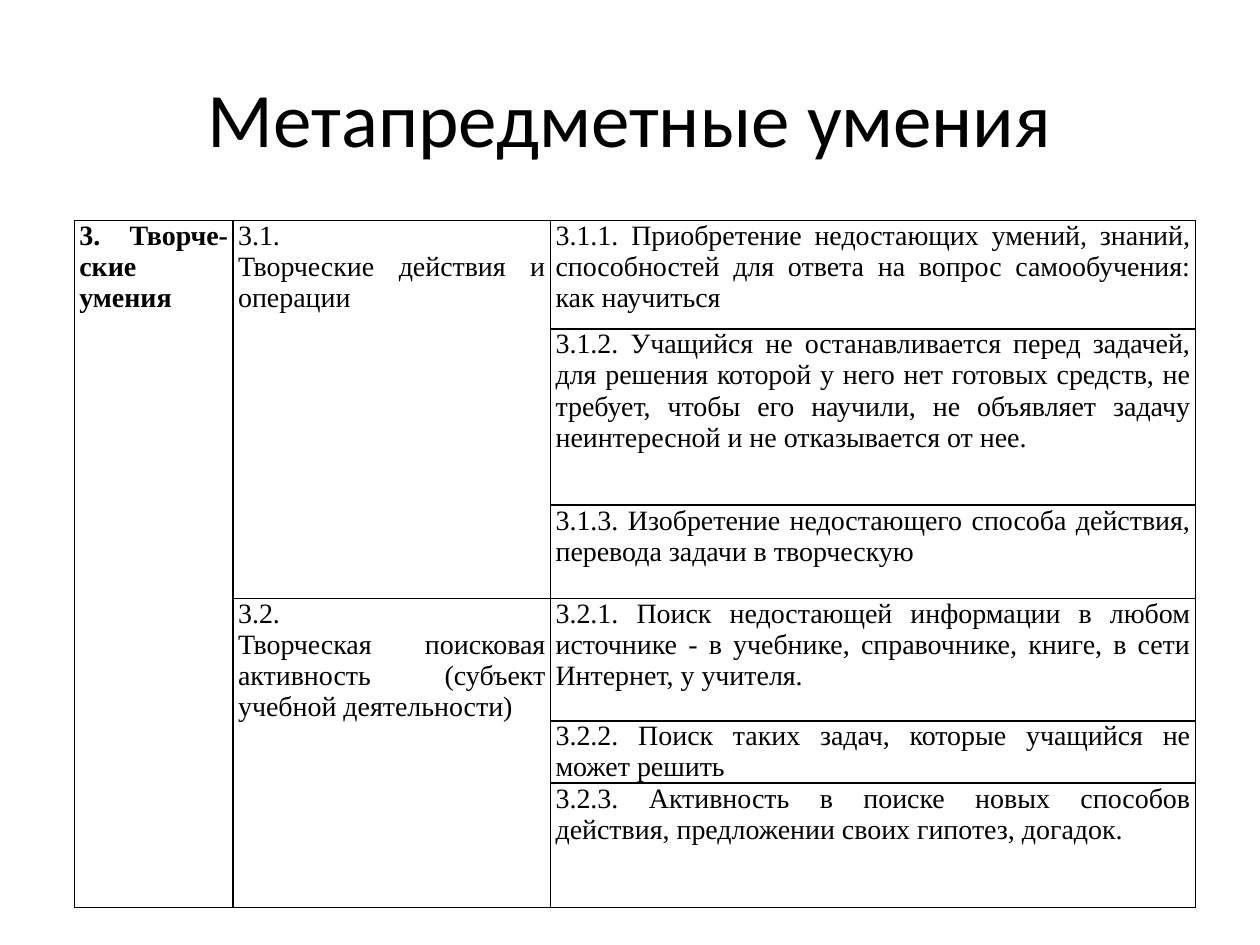
from lxml import etree
from pptx import Presentation
from pptx.dml.color import RGBColor
from pptx.enum.text import MSO_ANCHOR as Anchor, PP_ALIGN as Align
from pptx.oxml.ns import qn
from pptx.util import Inches, Pt

COLORS = {"text": "000000", "border": "000000"}
TITLE_ONLY = 5

COLUMN_WIDTHS = [1.26, 2.52, 5.12]
ROW_HEIGHTS = [0.86, 1.4, 0.74, 0.97, 0.49, 0.99]

SKILL_GROUP = "3. Творче-ские умения"
# Each subgroup: its paragraphs, then the skills listed beside it
SUBGROUPS = [
    (["3.1.", "Творческие действия и операции"], [
        "3.1.1. Приобретение недостающих умений, знаний, способностей "
        "для ответа на вопрос самообучения: как научиться",
        "3.1.2. Учащийся не останавливается перед задачей, для решения "
        "которой у него нет готовых средств, не требует, чтобы его научили, "
        "не объявляет задачу неинтересной и не отказывается от нее.",
        "3.1.3. Изобретение недостающего способа действия, "
        "перевода задачи в творческую",
    ]),
    (["3.2.", "Творческая поисковая активность (субъект учебной деятельности)"], [
        "3.2.1. Поиск недостающей информации в любом источнике - в учебнике, "
        "справочнике, книге, в сети Интернет, у учителя.",
        "3.2.2. Поиск таких задач, которые учащийся не может решить",
        "3.2.3. Активность в поиске новых способов действия, "
        "предложении своих гипотез, догадок.",
    ]),
]


def write_text(frame, *paragraphs, font="Times New Roman", size=16,
               bold=False, align=Align.JUSTIFY, color="text"):
    frame.word_wrap = True
    for i, text in enumerate(paragraphs):
        paragraph = frame.paragraphs[0] if i == 0 else frame.add_paragraph()
        paragraph.alignment = align
        run = paragraph.add_run()
        run.text = text
        run.font.name = font
        run.font.size = Pt(size)
        run.font.bold = bold
        run.font.color.rgb = RGBColor.from_string(COLORS[color])


class SlideBuilder:
    """Holds the current slide and the style of its table."""
    border_width = Pt(1)
    side_margin = Inches(0.04)

    def __init__(self, slide):
        self.slide = slide

    def title(self, text, left, top, width, height):
        title = self.slide.shapes.title
        title.left, title.top = Inches(left), Inches(top)
        title.width, title.height = Inches(width), Inches(height)
        title.text_frame.vertical_anchor = Anchor.MIDDLE
        write_text(title.text_frame, text, font="Calibri", size=44,
                   align=Align.CENTER)

    def table(self, left, top, widths, heights):
        table = self.slide.shapes.add_table(
            len(heights), len(widths), Inches(left), Inches(top),
            Inches(sum(widths)), Inches(sum(heights))).table
        table.first_row = table.horz_banding = False
        for column, width in zip(table.columns, widths):
            column.width = Inches(width)
        for row, height in zip(table.rows, heights):
            row.height = Inches(height)
        for cell in table.iter_cells():
            self.style_cell(cell)
        return table

    def style_cell(self, cell):
        cell.margin_left = cell.margin_right = self.side_margin
        cell.margin_top = cell.margin_bottom = 0
        cell.vertical_anchor = Anchor.TOP
        cell.fill.background()
        properties = cell._tc.get_or_add_tcPr()
        for i, side in enumerate(("a:lnL", "a:lnR", "a:lnT", "a:lnB")):
            line = etree.Element(qn(side), w=str(self.border_width))
            fill = etree.SubElement(line, qn("a:solidFill"))
            etree.SubElement(fill, qn("a:srgbClr"), val=COLORS["border"])
            properties.insert(i, line)


def main():
    prs = Presentation()
    prs.slide_width, prs.slide_height = Inches(10), Inches(7.5)
    builder = SlideBuilder(prs.slides.add_slide(prs.slide_layouts[TITLE_ONLY]))

    # Title
    builder.title("Метапредметные умения", 0.5, 0.3, 9, 1.25)

    # Skills table: group, subgroups, single skills
    skills_table = builder.table(0.59, 1.75, COLUMN_WIDTHS, ROW_HEIGHTS)
    group = skills_table.cell(0, 0)
    group.merge(skills_table.cell(len(ROW_HEIGHTS) - 1, 0))
    write_text(group.text_frame, SKILL_GROUP, bold=True)

    first_row = 0
    for subgroup_text, skills in SUBGROUPS:
        subgroup = skills_table.cell(first_row, 1)
        subgroup.merge(skills_table.cell(first_row + len(skills) - 1, 1))
        write_text(subgroup.text_frame, *subgroup_text)
        for row, skill in enumerate(skills, first_row):
            write_text(skills_table.cell(row, 2).text_frame, skill)
        first_row += len(skills)

    prs.save("out.pptx")


if __name__ == "__main__":
    main()
